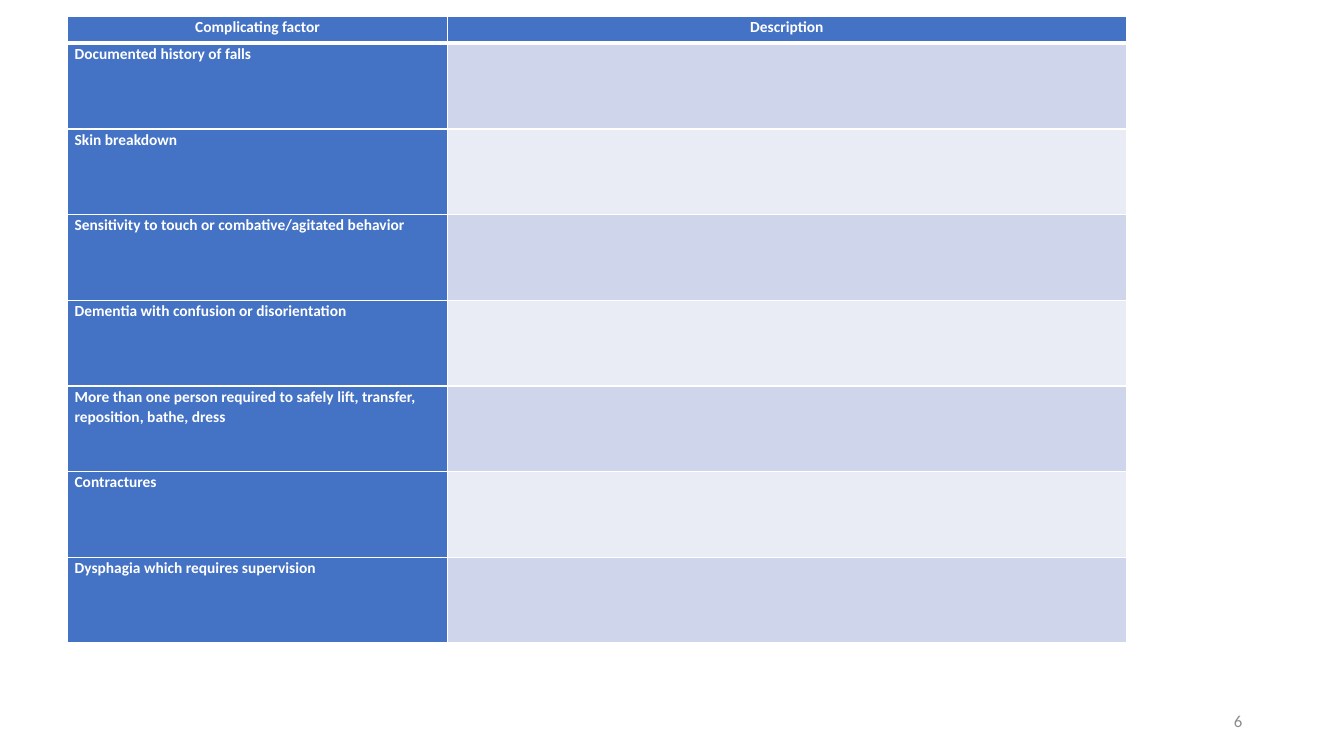
from lxml.etree import SubElement
from pptx import Presentation
from pptx.dml.color import RGBColor
from pptx.enum.text import MSO_ANCHOR, PP_ALIGN
from pptx.oxml.ns import qn
from pptx.util import Inches, Pt

HEADS = ["Complicating factor", "Description"]
FACTORS = [
    "Documented history of falls",
    "Skin breakdown",
    "Sensitivity to touch or combative/agitated behavior",
    "Dementia with confusion or disorientation",
    "More than one person required to safely lift, transfer, reposition, bathe, dress",
    "Contractures",
    "Dysphagia which requires supervision",
]
WIDTHS = [3.77, 6.73]
HEAD, ROW = 0.27, 0.85
BLUE, WHITE, GREY = "4472C4", "FFFFFF", "8C8C8C"
BANDS = ["CFD5EA", "E9EBF5"]


def color(code):
    """Turn a hex string into a colour."""
    return RGBColor.from_string(code)


def style(para, size, code, align, bold=False):
    """Format a whole paragraph."""
    para.alignment = align
    font = para.font
    font.name, font.size, font.bold = "Calibri", Pt(size), bold
    font.color.rgb = color(code)


def border(cell, top=1, bottom=1):
    """Draw white lines round a cell, widths in points."""
    props = cell._tc.get_or_add_tcPr()
    for side, width in zip("LRTB", (1, 1, top, bottom)):
        line = SubElement(props, qn(f"a:ln{side}"), w=str(Pt(width)))
        fill = SubElement(line, qn("a:solidFill"))
        SubElement(fill, qn("a:srgbClr"), val=WHITE)


def paint(cell, code):
    """Fill a cell with one colour."""
    cell.fill.solid()
    cell.fill.fore_color.rgb = color(code)


def label(cell, text, align=PP_ALIGN.LEFT):
    """Write a bold white label on blue."""
    paint(cell, BLUE)
    cell.margin_left = cell.margin_right = Inches(0.07)
    cell.margin_top = cell.margin_bottom = 0
    cell.text = text
    para = cell.text_frame.paragraphs[0]
    para.line_spacing = 1.07
    style(para, 11, WHITE, align, True)


def add_grid(slide):
    """Add the table of factors with blank descriptions."""
    count = len(FACTORS)
    frame = slide.shapes.add_table(
        count + 1, len(HEADS), Inches(0.67), Inches(0.16),
        Inches(sum(WIDTHS)), Inches(HEAD + count * ROW))
    table = frame.table
    for col, width in zip(table.columns, WIDTHS):
        col.width = Inches(width)
    for i, row in enumerate(table.rows):
        row.height = Inches(ROW if i else HEAD)
        for cell in row.cells:
            border(cell, 3 if i == 1 else 1, 1 if i else 3)
    for i, text in enumerate(HEADS):
        label(table.cell(0, i), text, PP_ALIGN.CENTER)
    for i, text in enumerate(FACTORS):
        label(table.cell(i + 1, 0), text)
        paint(table.cell(i + 1, 1), BANDS[i % 2])


def add_number(slide, text):
    """Add the page number at lower right."""
    box = slide.shapes.add_textbox(
        Inches(9.42), Inches(6.95), Inches(3), Inches(0.4))
    frame = box.text_frame
    frame.word_wrap = True
    frame.vertical_anchor = MSO_ANCHOR.MIDDLE
    frame.text = text
    style(frame.paragraphs[0], 12, GREY, PP_ALIGN.RIGHT)


def main():
    """Build and save the slide."""
    deck = Presentation()
    deck.slide_width, deck.slide_height = Inches(13.33), Inches(7.5)
    slide = deck.slides.add_slide(deck.slide_layouts[6])
    add_grid(slide)
    add_number(slide, "6")
    deck.save("out.pptx")


if __name__ == "__main__":
    main()
